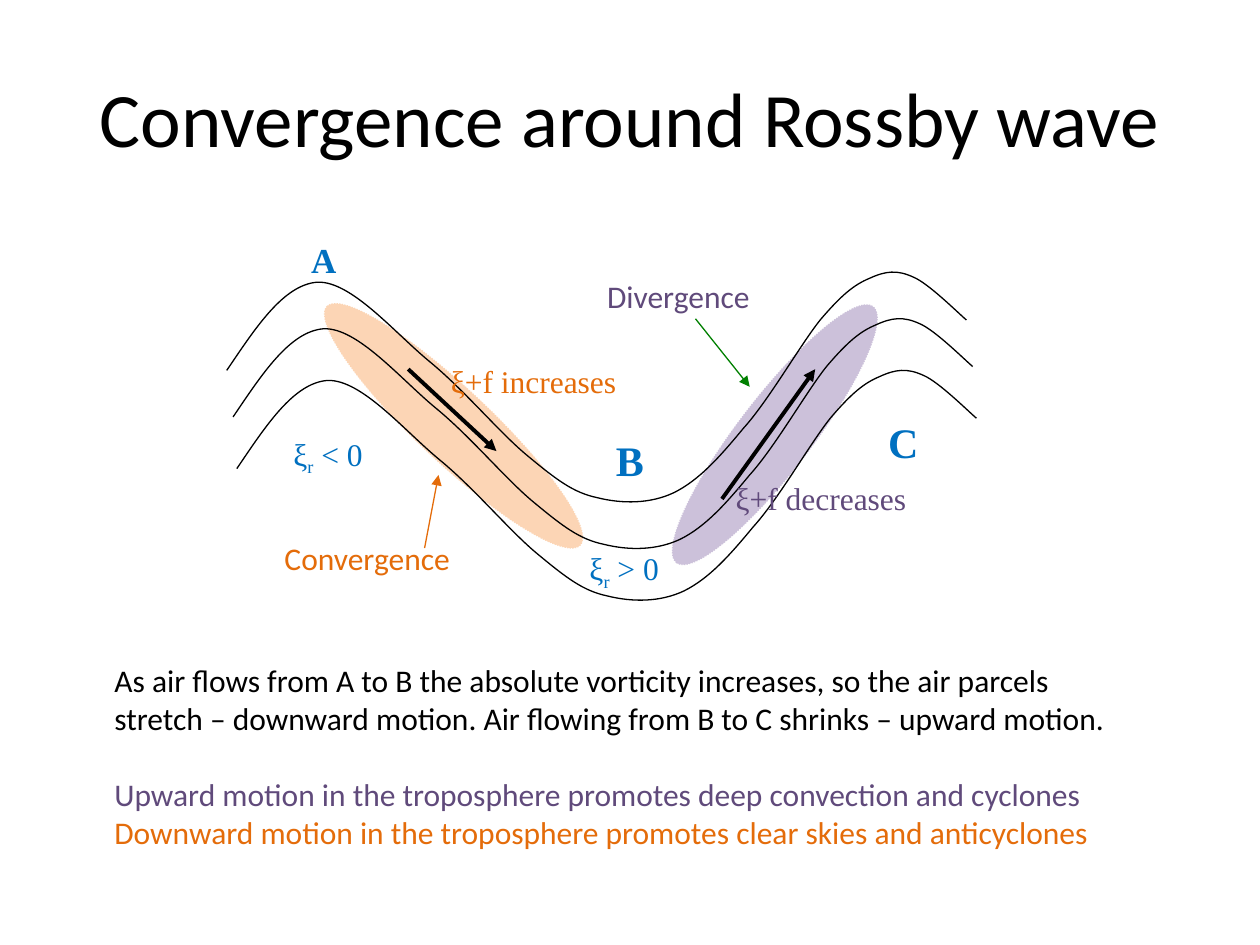
from lxml.etree import SubElement
from pptx import Presentation
from pptx.dml.color import RGBColor
from pptx.enum.dml import MSO_LINE
from pptx.enum.shapes import MSO_CONNECTOR, MSO_SHAPE
from pptx.enum.text import MSO_ANCHOR, PP_ALIGN
from pptx.oxml.ns import qn
from pptx.util import Inches, Pt

BLACK = RGBColor(0x00, 0x00, 0x00)
BLUE = RGBColor(0x00, 0x70, 0xC0)
ORANGE = RGBColor(0xE4, 0x6C, 0x0A)
PURPLE = RGBColor(0x60, 0x4A, 0x7B)
GREEN = RGBColor(0x00, 0x80, 0x00)
PEACH = RGBColor(0xFC, 0xD5, 0xB5)
LILAC = RGBColor(0xCC, 0xC1, 0xDA)
SANS, SERIF = "Calibri", "Times New Roman"

TITLE = "Convergence around Rossby wave"

# box, rotation, colour
ZONES = [
    ((4.87, 3.16, 2.56, 0.58), 307.5, LILAC),
    ((2.22, 3.09, 2.76, 0.58), 43.3, PEACH),
]

# Top streamline: a start point, then Bezier segments (control, control, end)
WAVE = [
    (1.8, 2.94),
    (2.03, 2.6), (2.25, 2.26), (2.52, 2.24),
    (2.79, 2.23), (3.13, 2.64), (3.41, 2.87),
    (3.69, 3.1), (3.97, 3.44), (4.19, 3.62),
    (4.42, 3.81), (4.55, 3.91), (4.74, 3.95),
    (4.94, 4), (5.16, 4), (5.35, 3.91),
    (5.55, 3.81), (5.71, 3.63), (5.9, 3.4),
    (6.1, 3.18), (6.35, 2.74), (6.51, 2.54),
    (6.68, 2.34), (6.78, 2.26), (6.9, 2.21),
    (7.03, 2.15), (7.12, 2.14), (7.25, 2.2),
    (7.37, 2.25), (7.6, 2.48), (7.67, 2.54),
]
STREAMLINE_OFFSETS = [(0, 0), (0.05, 0.37), (0.08, 0.78)]

# box, text, size, font, colour, bold; "_" makes the next letter a subscript
LABELS = [
    ((2.37, 1.84, 0.45, 0.45), "A", 20, SERIF, BLUE, True),
    ((4.79, 3.4, 0.45, 0.45), "B", 24, SERIF, BLUE, True),
    ((6.95, 3.26, 0.46, 0.45), "C", 24, SERIF, BLUE, True),
    ((2.23, 3.4, 0.99, 0.61), "ξ_r < 0", 18, SERIF, BLUE, False),
    ((4.58, 4.31, 0.99, 0.55), "ξ_r > 0", 18, SERIF, BLUE, False),
    ((3.48, 2.82, 1.86, 0.45), "ξ+f increases", 18, SERIF, ORANGE, False),
    ((5.74, 3.75, 1.86, 0.45), "ξ+f decreases", 18, SERIF, PURPLE, False),
    ((2.16, 4.23, 2.1, 0.52), "Convergence", 18, SANS, ORANGE, False),
    ((4.72, 2.15, 2.1, 0.52), "Divergence", 18, SANS, PURPLE, False),
]

# start, end, colour, width
ARROWS = [
    ((3.24, 2.93), (3.94, 3.58), BLACK, 2.25),
    ((5.73, 3.96), (6.47, 2.93), BLACK, 2.25),
    ((5.52, 2.53), (5.95, 3.07), GREEN, 0.75),
    ((3.37, 4.35), (3.48, 3.77), ORANGE, 0.75),
]

# text, colour, space before
NOTES = [
    ("As air flows from A to B the absolute vorticity increases, so the air "
     "parcels stretch – downward motion. Air flowing from B to C shrinks – "
     "upward motion.", BLACK, 0),
    ("Upward motion in the troposphere promotes deep convection and cyclones",
     PURPLE, 21.6),
    ("Downward motion in the troposphere promotes clear skies and anticyclones",
     ORANGE, 0),
]


def inches(values):
    return [Inches(v) for v in values]


def add_box(s, box):
    tf = s.shapes.add_textbox(*inches(box)).text_frame
    tf.word_wrap = True
    return tf


def add_run(p, text, size, font, color, bold=False):
    r = p.add_run()
    r.text = text
    r.font.size, r.font.name, r.font.bold = Pt(size), font, bold
    r.font.color.rgb = color
    return r


def add_label(s, box, text, *style):
    p = add_box(s, box).paragraphs[0]
    base, _, rest = text.partition("_")
    add_run(p, base, *style)
    if rest:
        sub = add_run(p, rest[0], *style)
        sub.font._element.set("baseline", "-25000")
        add_run(p, rest[1:], *style)


def add_zone(s, box, rotation, color):
    sp = s.shapes.add_shape(MSO_SHAPE.OVAL, *inches(box))
    sp.rotation = rotation
    sp.shadow.inherit = False
    sp.fill.solid()
    sp.fill.fore_color.rgb = color
    sp.line.color.rgb = color
    sp.line.width = Pt(0.75)
    sp.line.dash_style = MSO_LINE.ROUND_DOT


def bend(sp):
    """Turn each three straight segments of a freeform into one Bezier curve."""
    outline = next(sp._element.iter(qn("a:path")))
    lines = outline.findall(qn("a:lnTo"))
    for i in range(0, len(lines), 3):
        curve = SubElement(outline, qn("a:cubicBezTo"))
        for line in lines[i:i + 3]:
            curve.append(line[0])
            outline.remove(line)


def add_streamline(s, dx, dy):
    points = [inches((x + dx, y + dy)) for x, y in WAVE]
    builder = s.shapes.build_freeform(*points[0])
    builder.add_line_segments(points[1:], close=False)
    sp = builder.convert_to_shape()
    bend(sp)
    sp.shadow.inherit = False
    sp.fill.background()
    sp.line.color.rgb = BLACK
    sp.line.width = Pt(0.75)


def add_arrow(s, start, end, color, width):
    c = s.shapes.add_connector(MSO_CONNECTOR.STRAIGHT, *inches(start + end))
    c.line.color.rgb = color
    c.line.width = Pt(width)
    SubElement(c.line._get_or_add_ln(), qn("a:tailEnd"), type="triangle")
    SubElement(c._element.spPr, qn("a:effectLst"))


def main():
    prs = Presentation()
    prs.slide_width, prs.slide_height = inches((10, 7.5))
    s = prs.slides.add_slide(prs.slide_layouts[6])

    for zone in ZONES:
        add_zone(s, *zone)

    tf = add_box(s, (0.5, 0.3, 9, 1.25))
    tf.vertical_anchor = MSO_ANCHOR.MIDDLE
    tf.paragraphs[0].alignment = PP_ALIGN.CENTER
    add_run(tf.paragraphs[0], TITLE, 44, SANS, BLACK)

    for offset in STREAMLINE_OFFSETS:
        add_streamline(s, *offset)
    for label in LABELS:
        add_label(s, *label)
    for arrow in ARROWS:
        add_arrow(s, *arrow)

    tf = add_box(s, (0.81, 5.2, 8.33, 1.62))
    for i, (text, color, gap) in enumerate(NOTES):
        p = tf.add_paragraph() if i else tf.paragraphs[0]
        p.space_before = Pt(gap)
        add_run(p, text, 18, SANS, color)

    prs.save("out.pptx")


if __name__ == "__main__":
    main()
